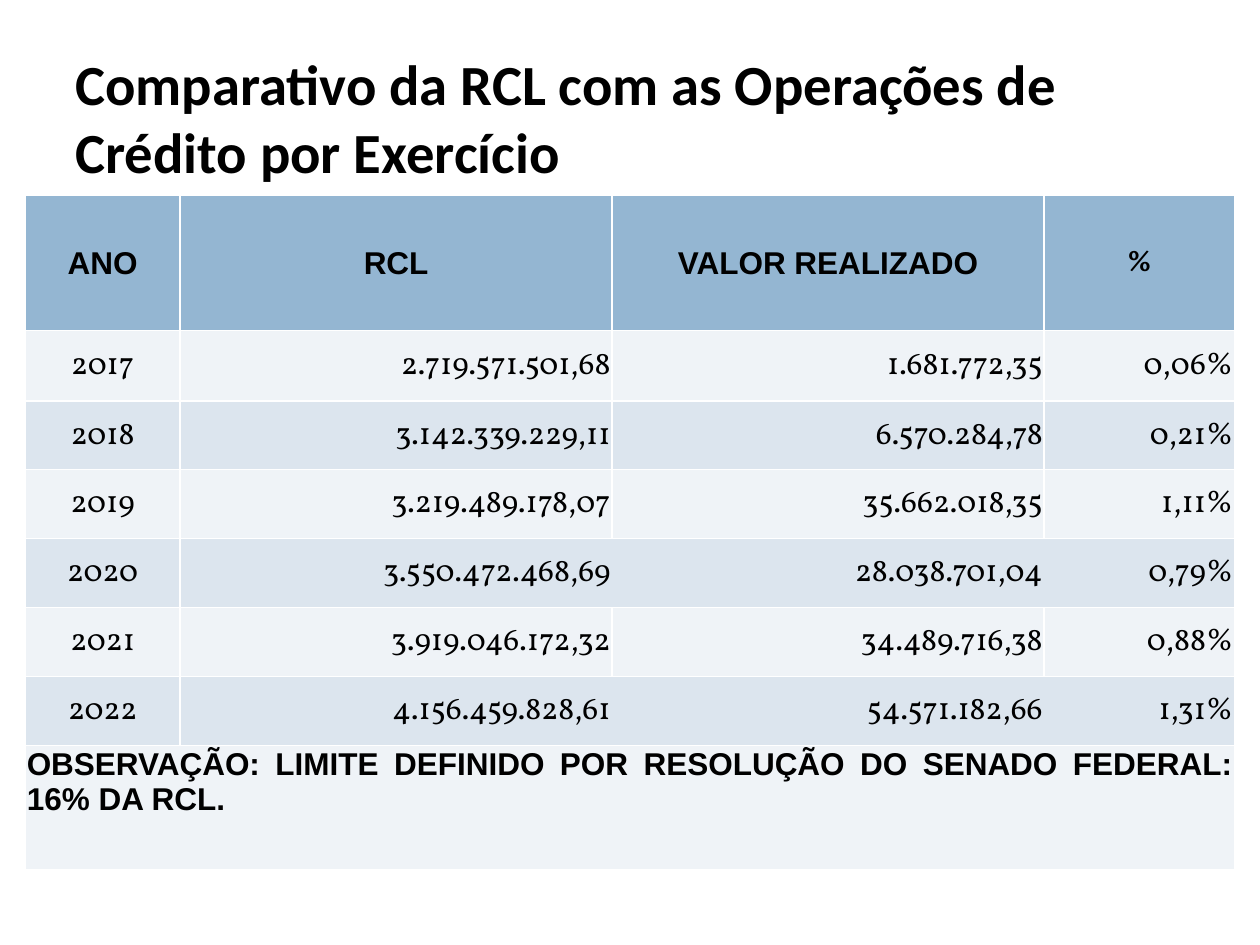
"""Build the slide comparing RCL with credit operations by year."""
from lxml import etree
from pptx import Presentation
from pptx import util as u
from pptx.dml.color import RGBColor
from pptx.enum import text
from pptx.oxml import ns

TITLE = "Comparativo da RCL com as Operações de Crédito por Exercício"
HEADER = ("ANO", "RCL", "VALOR REALIZADO", "%")
YEARS = [
    ("2017", "2.719.571.501,68", "1.681.772,35", "0,06%"),
    ("2018", "3.142.339.229,11", "6.570.284,78", "0,21%"),
    ("2019", "3.219.489.178,07", "35.662.018,35", "1,11%"),
    ("2020", "3.550.472.468,69", "28.038.701,04", "0,79%"),
    ("2021", "3.919.046.172,32", "34.489.716,38", "0,88%"),
    ("2022", "4.156.459.828,61", "54.571.182,66", "1,31%"),
]
NOTE = "OBSERVAÇÃO: LIMITE DEFINIDO POR RESOLUÇÃO DO SENADO FEDERAL: 16% DA RCL."
OPEN_YEARS = ("2020", "2022")

COLS = (3.12, 8.71, 8.71, 3.84)
ROWS = (2.72, 1.42) + (1.39,) * 5 + (2.51,)

BLACK = RGBColor(0x00, 0x00, 0x00)
WHITE = RGBColor(0xFF, 0xFF, 0xFF)
BLUE = RGBColor(0x94, 0xB6, 0xD2)
PALE = RGBColor(0xEF, 0xF3, 0xF7)
SOFT = RGBColor(0xDC, 0xE5, 0xEE)

CENTER, RIGHT, JUSTIFY = (text.PP_ALIGN.CENTER, text.PP_ALIGN.RIGHT,
                          text.PP_ALIGN.JUSTIFY)
MIDDLE, TOP = text.MSO_ANCHOR.MIDDLE, text.MSO_ANCHOR.TOP
CELL = dict(margin_left=u.Cm(0.03), margin_right=u.Cm(0.03),
            margin_top=u.Cm(0.03), margin_bottom=u.Cm(0))
HEAD_FONT = dict(name="Arial", size=u.Pt(18), bold=True)
SIGN_FONT = dict(name="Vollkorn", size=u.Pt(17), bold=True)
BODY_FONT = dict(name="Vollkorn", size=u.Pt(18), bold=False)


def apply(obj, values):
    for name, value in values.items():
        setattr(obj, name, value)


def write(p, words, font, align):
    p.alignment = align
    r = p.add_run()
    r.text = words
    apply(r.font, font)
    r.font.color.rgb = BLACK


def set_borders(cell, hidden):
    props = cell._tc.get_or_add_tcPr()
    for i, side in enumerate("LRTB"):
        line = etree.Element(ns.qn("a:ln" + side), w=str(u.Pt(1)))
        if side in hidden:
            etree.SubElement(line, ns.qn("a:noFill"))
        else:
            fill = etree.SubElement(line, ns.qn("a:solidFill"))
            etree.SubElement(fill, ns.qn("a:srgbClr"), val=str(WHITE))
        props.insert(i, line)


def fill_cell(cell, words, font, align, anchor, color, hidden=""):
    apply(cell, CELL)
    cell.vertical_anchor = anchor
    cell.fill.solid()
    cell.fill.fore_color.rgb = color
    set_borders(cell, hidden)
    write(cell.text_frame.paragraphs[0], words, font, align)


def add_title(s):
    tf = s.shapes.add_textbox(u.Cm(1.27), u.Cm(0.76), u.Cm(22.86), u.Cm(3.18)).text_frame
    apply(tf, dict(word_wrap=True, vertical_anchor=MIDDLE))
    write(tf.paragraphs[0], TITLE, dict(name="Calibri", size=u.Pt(32.4), bold=True),
          text.PP_ALIGN.LEFT)


def add_comparison(s):
    table = s.shapes.add_table(len(ROWS), len(COLS), u.Cm(0.51), u.Cm(3.94),
                               u.Cm(sum(COLS)), u.Cm(sum(ROWS))).table
    for col, width in zip(table.columns, COLS):
        col.width = u.Cm(width)
    for row, height in zip(table.rows, ROWS):
        row.height = u.Cm(height)
    for c, words in enumerate(HEADER):
        font = SIGN_FONT if words == "%" else HEAD_FONT
        fill_cell(table.cell(0, c), words, font, CENTER, MIDDLE, BLUE)
    for i, values in enumerate(YEARS):
        open_sides = ("", "R", "LR", "L") if values[0] in OPEN_YEARS else ("",) * 4
        for c, words in enumerate(values):
            fill_cell(table.cell(i + 1, c), words, BODY_FONT, RIGHT if c else CENTER,
                      MIDDLE, SOFT if i % 2 else PALE, open_sides[c])
    last = len(ROWS) - 1
    note = table.cell(last, 0)
    note.merge(table.cell(last, len(COLS) - 1))
    fill_cell(note, NOTE, HEAD_FONT, JUSTIFY, TOP, PALE)


def main():
    prs = Presentation()
    apply(prs, dict(slide_width=u.Cm(25.4), slide_height=u.Cm(19.05)))
    s = prs.slides.add_slide(prs.slide_layouts[6])
    add_title(s)
    add_comparison(s)
    prs.save("out.pptx")


if __name__ == "__main__":
    main()
